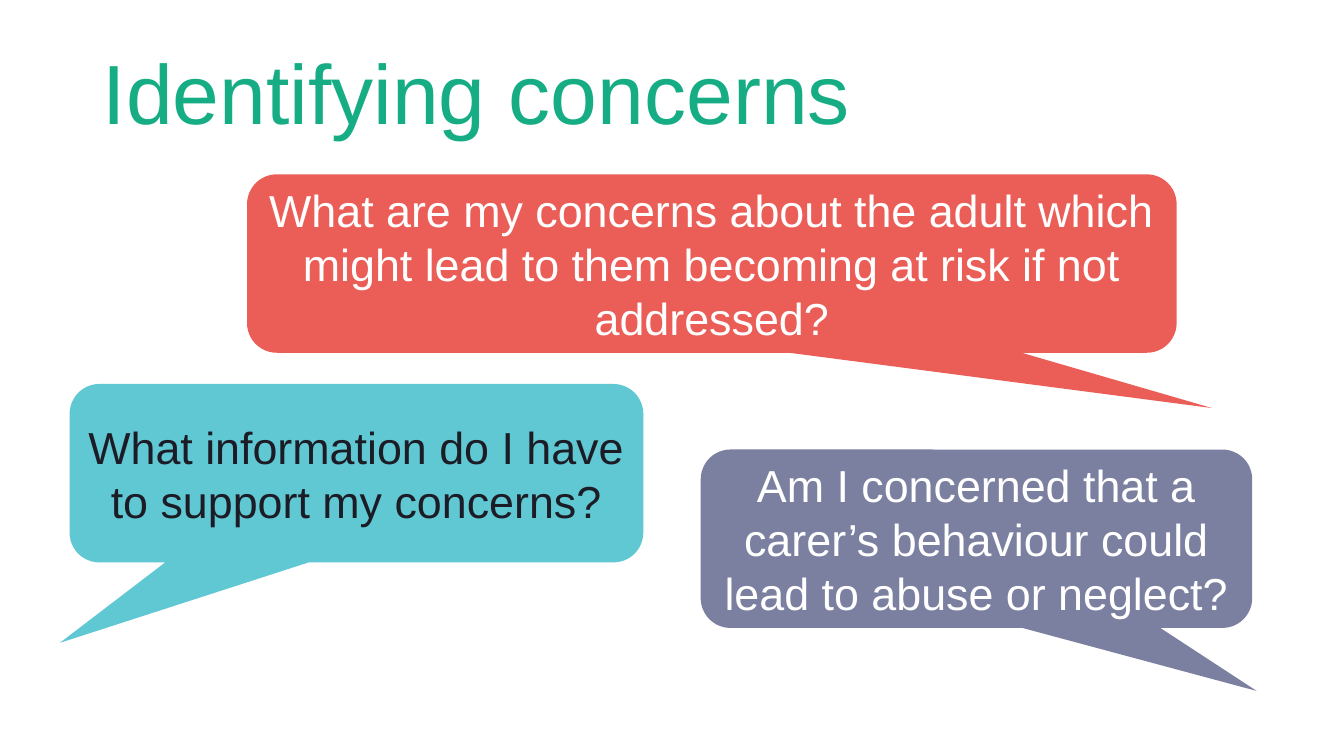
from pptx import Presentation
from pptx.dml.color import RGBColor
from pptx.enum import shapes, text
from pptx.util import Inches, Pt

GREEN = RGBColor(0x16, 0xAD, 0x85)
RED = RGBColor(0xEB, 0x5E, 0x57)
TURQUOISE = RGBColor(0x60, 0xC8, 0xD3)
SLATE = RGBColor(0x7B, 0x7F, 0xA0)
WHITE = RGBColor(0xFF, 0xFF, 0xFF)
INK = RGBColor(0x1C, 0x1C, 0x26)

BUBBLE_HEIGHT = 1.77
CORNER = 0.167


def write(frame, words, *, size, color, align, anchor, spacing=1.0):
    frame.word_wrap = True
    frame.auto_size = text.MSO_AUTO_SIZE.NONE
    frame.vertical_anchor = anchor
    paragraph = frame.paragraphs[0]
    paragraph.alignment = align
    paragraph.line_spacing = spacing
    run = paragraph.add_run()
    run.text = words
    run.font.name = "Arial"
    run.font.size = Pt(size)
    run.font.color.rgb = color


def place_title(slide, words, left, top, width, height):
    title = slide.shapes.title
    title.left, title.top = Inches(left), Inches(top)
    title.width, title.height = Inches(width), Inches(height)
    write(title.text_frame, words, size=60, color=GREEN, spacing=0.9,
          align=text.PP_ALIGN.LEFT, anchor=text.MSO_ANCHOR.BOTTOM)


def add_bubble(slide, question, left, top, width, *, tip, fill, color):
    """Tip is the tail's end, as shares of the bubble's size from its centre."""
    bubble = slide.shapes.add_shape(
        shapes.MSO_SHAPE.ROUNDED_RECTANGULAR_CALLOUT,
        Inches(left), Inches(top), Inches(width), Inches(BUBBLE_HEIGHT))
    for index, value in enumerate((*tip, CORNER)):
        bubble.adjustments[index] = value
    bubble.shadow.inherit = False
    bubble.fill.solid()
    bubble.fill.fore_color.rgb = fill
    bubble.line.fill.background()
    write(bubble.text_frame, question, size=32, color=color,
          align=text.PP_ALIGN.CENTER, anchor=text.MSO_ANCHOR.MIDDLE)


def build_concerns_slide(deck):
    slide = deck.slides.add_slide(deck.slide_layouts.get_by_name("Title Only"))
    place_title(slide, "Identifying concerns", 0.92, 0.02, 11.5, 1.45)
    add_bubble(slide, "What are my concerns about the adult which might lead "
               "to them becoming at risk if not addressed?",
               2.45, 1.73, 9.22, tip=(0.538, 0.81), fill=RED, color=WHITE)
    add_bubble(slide, "What information do I have to support my concerns?",
               0.69, 3.81, 5.69, tip=(-0.517, 0.951), fill=TURQUOISE, color=INK)
    add_bubble(slide, "Am I concerned that a carer’s behaviour could lead "
               "to abuse or neglect?",
               6.95, 4.46, 5.47, tip=(0.508, 0.853), fill=SLATE, color=WHITE)


def main():
    deck = Presentation()
    deck.slide_width, deck.slide_height = Inches(13.33), Inches(7.5)
    build_concerns_slide(deck)
    deck.save("out.pptx")


if __name__ == "__main__":
    main()
